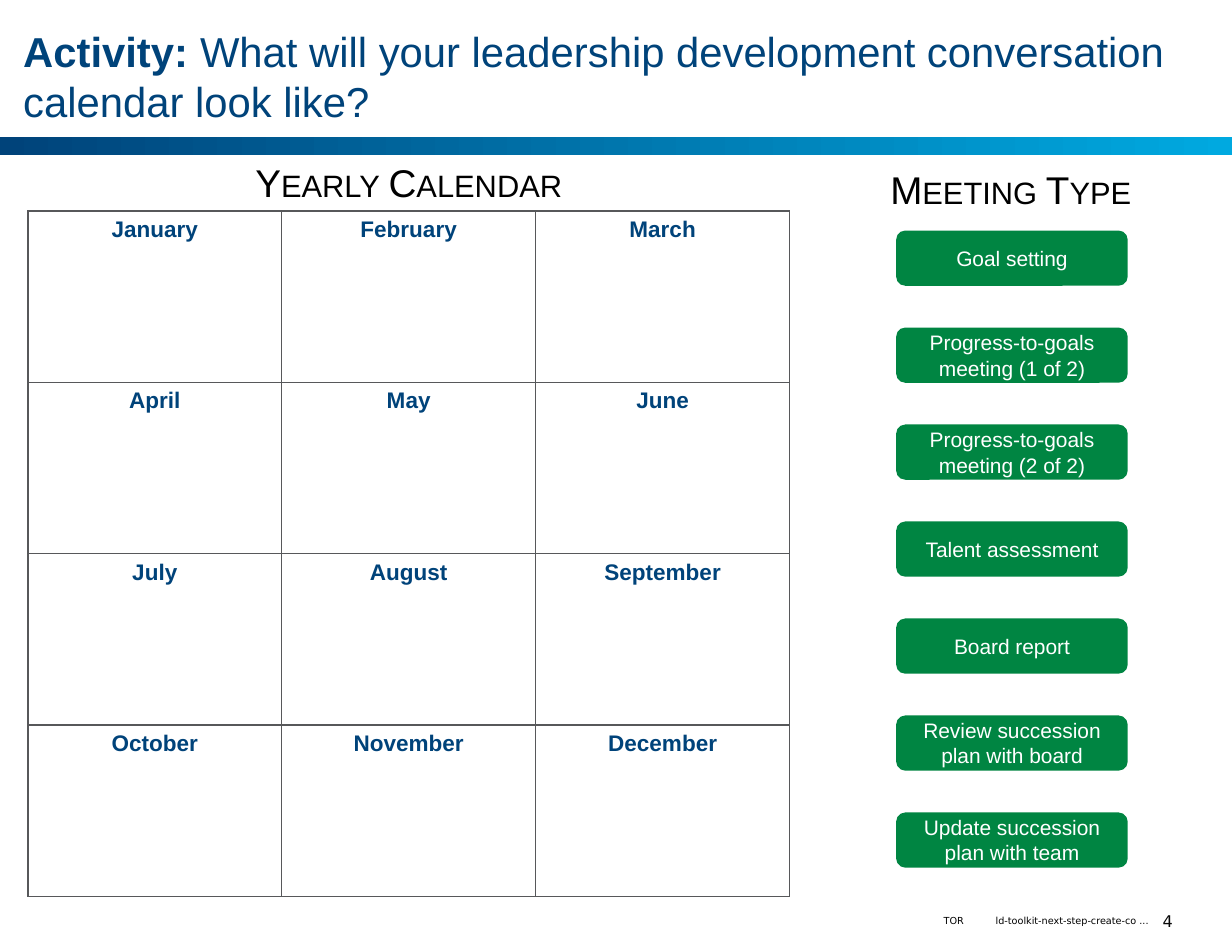
import itertools

import pptx
import pptx.dml.color
import pptx.enum.shapes
import pptx.enum.text
import pptx.oxml
import pptx.oxml.ns
import pptx.util

WIDTH, HEIGHT = pptx.util.Inches(10.64), pptx.util.Inches(8.14)
NAVY, SKY, GREEN, GREY = "00437A", "00A9E0", "008542", "57585A"
BLACK, INK, WHITE = "000000", "080808", "FFFFFF"
ALIGN = pptx.enum.text.PP_ALIGN
MIDDLE = pptx.enum.text.MSO_ANCHOR.MIDDLE
SHAPE = pptx.enum.shapes.MSO_SHAPE
MONTHS = [
    ["January", "February", "March"],
    ["April", "May", "June"],
    ["July", "August", "September"],
    ["October", "November", "December"],
]
MEETINGS = [
    "Goal setting",
    "Progress-to-goals meeting (1 of 2)",
    "Progress-to-goals meeting (2 of 2)",
    "Talent assessment",
    "Board report",
    "Review succession plan with board",
    "Update succession plan with team",
]


def colour(value):
    """Turn a hex string into a colour."""
    return pptx.dml.color.RGBColor.from_string(value)


def area(left, top, width, height):
    """Turn percentages of the slide into a box."""
    return (int(WIDTH * left / 100), int(HEIGHT * top / 100),
            int(WIDTH * width / 100), int(HEIGHT * height / 100))


def add_run(paragraph, words, size, ink, bold=False, font="Arial"):
    """Append one formatted run."""
    run = paragraph.add_run()
    run.text = words
    run.font.size, run.font.name, run.font.bold = pptx.util.Pt(size), font, bold
    run.font.color.rgb = colour(ink)
    return run


def set_frame(frame, left=0.0, top=0.0, right=0.0, bottom=0.0, wrap=True):
    """Set the margins in inches and the wrapping of a text frame."""
    frame.margin_left, frame.margin_top = pptx.util.Inches(left), pptx.util.Inches(top)
    frame.margin_right, frame.margin_bottom = pptx.util.Inches(right), pptx.util.Inches(bottom)
    frame.word_wrap = wrap


def add_title(slide, box):
    """Place the two-weight title."""
    title = slide.shapes.title
    title.left, title.top, title.width, title.height = box
    frame = title.text_frame
    set_frame(frame, right=0.08)
    frame.auto_size = pptx.enum.text.MSO_AUTO_SIZE.NONE
    frame.vertical_anchor = MIDDLE
    paragraph = frame.paragraphs[0]
    paragraph.alignment = ALIGN.LEFT
    add_run(paragraph, "Activity: ", 26, NAVY, bold=True)
    add_run(paragraph, "What will your leadership development conversation calendar look like?", 26, NAVY)


def add_band(slide, box):
    """Draw the gradient band under the title."""
    band = slide.shapes.add_shape(SHAPE.RECTANGLE, *box)
    band.shadow.inherit = False
    band.line.fill.background()
    band.fill.gradient()
    band.fill.gradient_angle = 0
    for stop, shade in zip(band.fill.gradient_stops, (NAVY, SKY)):
        stop.color.rgb = colour(shade)


def add_heading(slide, box, words):
    """Write a centred small-caps heading."""
    frame = slide.shapes.add_textbox(*box).text_frame
    set_frame(frame, 0.05, 0.05, 0.05, 0.05)
    paragraph = frame.paragraphs[0]
    paragraph.alignment = ALIGN.CENTER
    add_run(paragraph, words, 24, BLACK)._r.get_or_add_rPr().set("cap", "small")


def add_borders(cell):
    """Rule all four sides of a cell."""
    namespace = pptx.oxml.ns.nsdecls("a")
    for side in ("lnL", "lnR", "lnT", "lnB"):
        cell._tc.get_or_add_tcPr().append(pptx.oxml.parse_xml(
            f'<a:{side} {namespace} w="12700"><a:solidFill>'
            f'<a:srgbClr val="{GREY}"/></a:solidFill></a:{side}>'))


def add_calendar(slide, box):
    """Build the table of months."""
    rows, columns = len(MONTHS), len(MONTHS[0])
    calendar = slide.shapes.add_table(rows, columns, *box).table
    calendar.first_row = calendar.horz_banding = False
    for row, column in itertools.product(range(rows), range(columns)):
        cell = calendar.cell(row, column)
        add_borders(cell)
        cell.fill.background()
        paragraph = cell.text_frame.paragraphs[0]
        paragraph.alignment = ALIGN.CENTER
        add_run(paragraph, MONTHS[row][column], 14, NAVY, bold=True)


def add_meetings(slide, box):
    """Stack the meeting types evenly from top to bottom of the box."""
    left, top, width, height = box
    share = 0.57
    pitch = height / (len(MEETINGS) - 1 + share)
    for index, meeting in enumerate(MEETINGS):
        button = slide.shapes.add_shape(
            SHAPE.ROUNDED_RECTANGLE, left, int(top + index * pitch), width, int(share * pitch))
        button.shadow.inherit = False
        button.fill.solid()
        button.fill.fore_color.rgb = colour(GREEN)
        button.line.fill.background()
        frame = button.text_frame
        set_frame(frame, 0.05, 0.05, 0.05, 0.05)
        frame.vertical_anchor = MIDDLE
        paragraph = frame.paragraphs[0]
        paragraph.alignment = ALIGN.CENTER
        add_run(paragraph, meeting, 13, WHITE)


def add_footer(slide, top, height):
    """Write the author, file name and page number on one line."""
    entries = [
        (76.13, 2.16, "TOR", 6, BLACK, ALIGN.LEFT, 0.05),
        (79.79, 13.44, "ld-toolkit-next-step-create-co ...", 6, BLACK, ALIGN.RIGHT, 0.05),
        (93.14, 3.29, "4", 10, INK, ALIGN.CENTER, 0),
    ]
    for left, width, words, size, ink, alignment, margin in entries:
        frame = slide.shapes.add_textbox(*area(left, top, width, height)).text_frame
        set_frame(frame, left=margin, wrap=False)
        frame.vertical_anchor = MIDDLE
        paragraph = frame.paragraphs[0]
        paragraph.alignment = alignment
        add_run(paragraph, words, size, ink, font="DejaVu Sans")


def main():
    """Build and save the slide."""
    deck = pptx.Presentation()
    deck.slide_width, deck.slide_height = WIDTH, HEIGHT
    slide = deck.slides.add_slide(deck.slide_layouts.get_by_name("Title Only"))
    add_footer(slide, 97.05, 1.23)
    add_band(slide, area(0, 14.5, 100, 1.97))
    add_title(slide, area(1.88, 1.97, 96.52, 12.16))
    add_calendar(slide, area(2.26, 22.36, 61.84, 72.73))
    add_meetings(slide, area(72.74, 24.45, 18.8, 67.57))
    add_heading(slide, area(2.26, 16.22, 61.84, 6.14), "Yearly Calendar")
    add_heading(slide, area(64.1, 16.95, 35.9, 6.14), "Meeting Type")
    deck.save("out.pptx")


if __name__ == "__main__":
    main()
